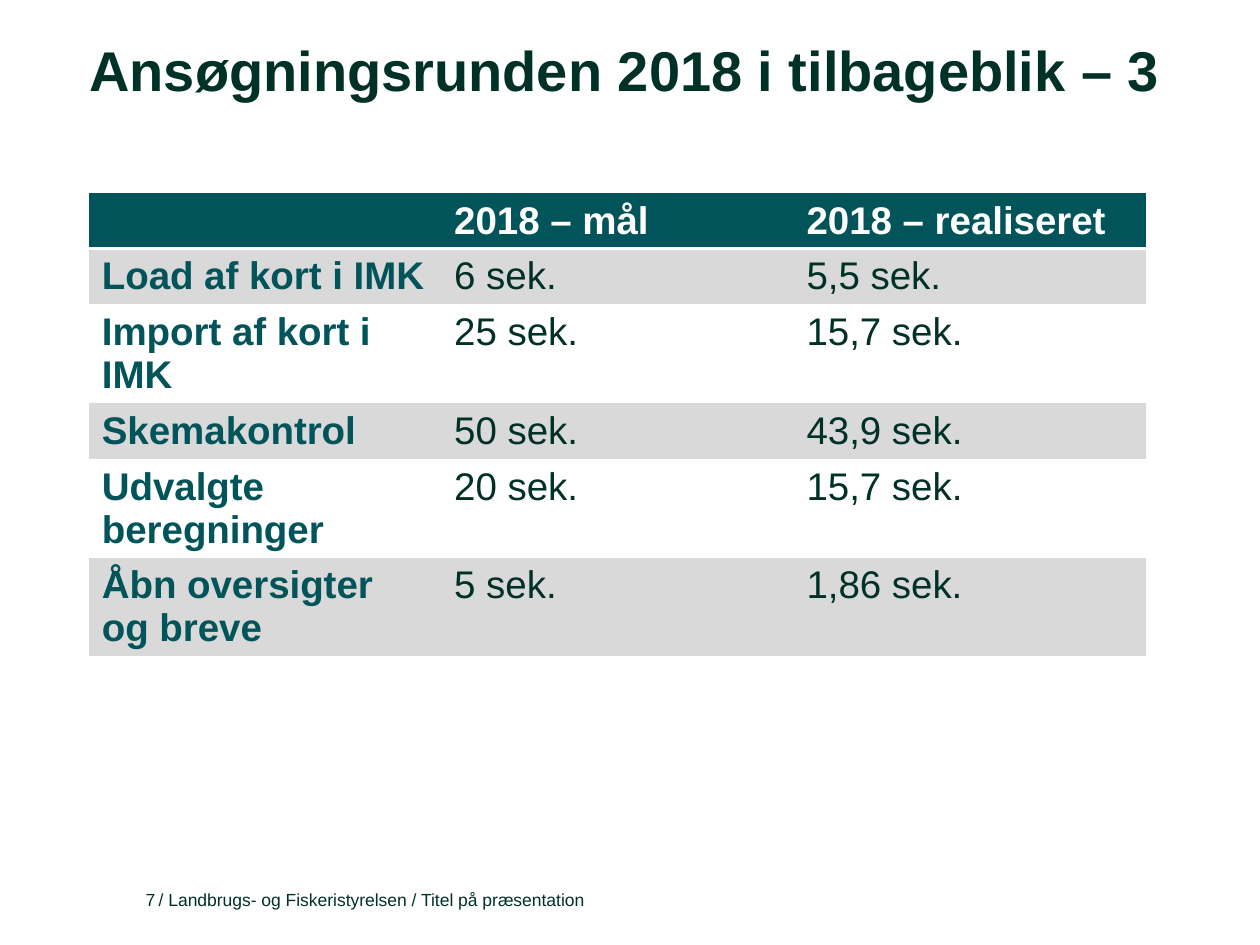
from dataclasses import dataclass

from lxml import etree
from pptx import Presentation
from pptx.dml.color import RGBColor
from pptx.enum import text
from pptx.oxml.ns import qn
from pptx.util import Cm, Pt


@dataclass(frozen=True)
class Theme:
    font: str = "Arial"
    dark: str = "003127"
    teal: str = "00545A"
    grey: str = "D9D9D9"
    white: str = "FFFFFF"
    title_size: int = 32
    table_size: int = 22
    footer_size: int = 10


theme = Theme()


def style(paragraph, size, color, bold=False):
    font = paragraph.font
    font.name = theme.font
    font.size = Pt(size)
    font.bold = bold
    font.color.rgb = RGBColor.from_string(color)


def clear_margins(frame, anchor):
    frame.margin_left = frame.margin_top = frame.margin_right = frame.margin_bottom = 0
    frame.vertical_anchor = anchor
    frame.auto_size = text.MSO_AUTO_SIZE.NONE
    frame.word_wrap = True


presentation = Presentation()
presentation.slide_width = Cm(25.4)
presentation.slide_height = Cm(19.05)
slide = presentation.slides.add_slide(presentation.slide_layouts[5])

title = slide.shapes.title
title.left, title.top, title.width, title.height = Cm(1.8), Cm(0.86), Cm(21.8), Cm(1.3)
clear_margins(title.text_frame, text.MSO_ANCHOR.TOP)
title.text_frame.text = "Ansøgningsrunden 2018 i tilbageblik – 3"
paragraph = title.text_frame.paragraphs[0]
paragraph.alignment = text.PP_ALIGN.LEFT
paragraph.line_spacing = 0.91
style(paragraph, theme.title_size, theme.dark, True)

footers = [
    ("/ Landbrugs- og Fiskeristyrelsen / Titel på præsentation", 3.2, 10.1, text.PP_ALIGN.LEFT),
    ("7", 2.29, 0.84, text.PP_ALIGN.RIGHT),
]
for wording, left, width, alignment in footers:
    footer = slide.shapes.add_textbox(Cm(left), Cm(17.78), Cm(width), Cm(0.56))
    clear_margins(footer.text_frame, text.MSO_ANCHOR.BOTTOM)
    footer.text_frame.text = wording
    paragraph = footer.text_frame.paragraphs[0]
    paragraph.alignment = alignment
    style(paragraph, theme.footer_size, theme.dark)

rows = [
    ("", "2018 – mål", "2018 – realiseret"),
    ("Load af kort i IMK", "6 sek.", "5,5 sek."),
    ("Import af kort i IMK", "25 sek.", "15,7 sek."),
    ("Skemakontrol", "50 sek.", "43,9 sek."),
    ("Udvalgte beregninger", "20 sek.", "15,7 sek."),
    ("Åbn oversigter og breve", "5 sek.", "1,86 sek."),
]
row_height = Cm(1.03)
table = slide.shapes.add_table(
    len(rows), len(rows[0]), Cm(1.8), Cm(3.89), Cm(21.31), row_height * len(rows)
).table
table.first_col = True
table.horz_banding = False
no_style = "{2D5ABB26-0587-4C30-8999-92F81FD0307C}"
table._tbl.tblPr.find(qn("a:tableStyleId")).text = no_style

for row_index, row in enumerate(rows):
    table.rows[row_index].height = row_height
    is_header = row_index == 0
    for column_index, wording in enumerate(row):
        cell = table.cell(row_index, column_index)
        cell.text = wording
        is_label = column_index == 0
        color = theme.white if is_header else theme.teal if is_label else theme.dark
        style(cell.text_frame.paragraphs[0], theme.table_size, color, is_header or is_label)
        if is_header:
            border = etree.SubElement(cell._tc.get_or_add_tcPr(), qn("a:lnB"), w=str(Pt(2)))
            border_fill = etree.SubElement(border, qn("a:solidFill"))
            etree.SubElement(border_fill, qn("a:srgbClr"), val=theme.white)
        if is_header or row_index % 2:
            cell.fill.solid()
            cell.fill.fore_color.rgb = RGBColor.from_string(theme.teal if is_header else theme.grey)
        else:
            cell.fill.background()

presentation.save("out.pptx")
